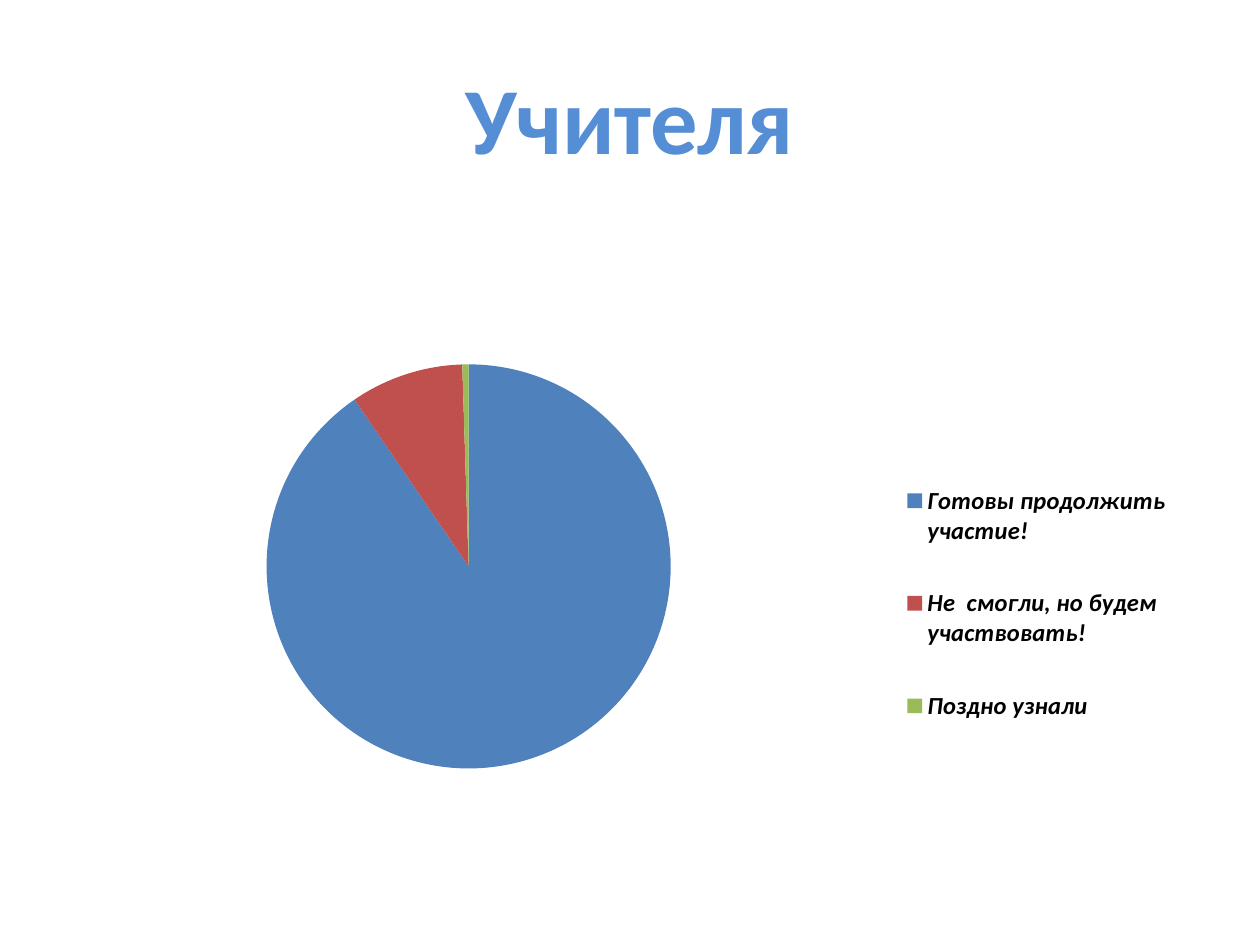
from lxml import etree
from pptx import Presentation
from pptx.chart.data import CategoryChartData
from pptx.dml.color import RGBColor
from pptx.enum.chart import XL_CHART_TYPE, XL_LEGEND_POSITION
from pptx.enum.text import MSO_ANCHOR, PP_ALIGN
from pptx.oxml.ns import qn
from pptx.util import Inches, Pt

PIE = XL_CHART_TYPE.PIE
LEGEND_RIGHT = XL_LEGEND_POSITION.RIGHT
MIDDLE = MSO_ANCHOR.MIDDLE
CENTER = PP_ALIGN.CENTER

FONT = "Calibri"
TITLE_BLUE = RGBColor(0x55, 0x8E, 0xD5)
BLACK = RGBColor(0, 0, 0)
BLUE = RGBColor(0x4F, 0x81, 0xBD)
RED = RGBColor(0xC0, 0x50, 0x4D)
GREEN = RGBColor(0x9B, 0xBB, 0x59)

ANSWERS = [
    ("Готовы продолжить участие!", 90, BLUE),
    ("Не  смогли, но будем участвовать!", 9, RED),
    ("Поздно узнали", 0.5, GREEN),
]


def format_font(font, size, color, bold=False, italic=False):
    font.name = FONT
    font.size = Pt(size)
    font.color.rgb = color
    font.bold = bold
    font.italic = italic


def add_text(slide, box, text, *, align=CENTER, anchor=MIDDLE, **font_format):
    shape = slide.shapes.add_textbox(*map(Inches, box))
    frame = shape.text_frame
    frame.word_wrap = True
    frame.vertical_anchor = anchor
    paragraph = frame.paragraphs[0]
    paragraph.alignment = align
    run = paragraph.add_run()
    run.text = text
    format_font(run.font, **font_format)


def set_layout(parent, box, before, inner=False):
    """Place a chart part at fractions of the chart, ahead of the named child."""
    for old_layout in parent.findall(qn("c:layout")):
        parent.remove(old_layout)
    layout = etree.Element(qn("c:layout"))
    manual = etree.SubElement(layout, qn("c:manualLayout"))
    settings = [("layoutTarget", "inner")] if inner else []
    settings += [("xMode", "edge"), ("yMode", "edge")]
    settings += zip("xywh", box)
    for name, value in settings:
        etree.SubElement(manual, qn(f"c:{name}")).set("val", str(value))
    parent.find(qn(before)).addprevious(layout)


def add_answer_pie(slide, box):
    data = CategoryChartData()
    data.categories = [label for label, _, _ in ANSWERS]
    data.add_series("Series 1", [value for _, value, _ in ANSWERS])
    chart = slide.shapes.add_chart(PIE, *map(Inches, box), data).chart
    chart.has_title = False
    format_font(chart.font, 10, BLACK)

    plot = chart.plots[0]
    plot.vary_by_categories = True
    for index, (_, _, color) in enumerate(ANSWERS):
        point_format = plot.series[0].points[index].format
        point_format.fill.solid()
        point_format.fill.fore_color.rgb = color
        point_format.line.fill.background()

    chart.has_legend = True
    legend = chart.legend
    legend.position = LEGEND_RIGHT
    legend.include_in_layout = False
    format_font(legend.font, 14, BLACK, bold=True, italic=True)

    plot_area = chart.element.find(".//" + qn("c:plotArea"))
    set_layout(plot_area, (0, 0.254, 0.735, 0.746), "c:pieChart", inner=True)
    legend_element = chart.element.find(".//" + qn("c:legend"))
    set_layout(legend_element, (0.73, 0.4, 0.27, 0.59), "c:overlay")


def main():
    presentation = Presentation()
    presentation.slide_width = Inches(10)
    presentation.slide_height = Inches(7.5)
    slide = presentation.slides.add_slide(presentation.slide_layouts[6])
    add_text(slide, (0.5, 0.3, 9, 1.25), "Учителя",
             size=54, color=TITLE_BLUE, bold=True)
    add_answer_pie(slide, (0.39, 1.8, 9.06, 4.3))
    presentation.save("out.pptx")


if __name__ == "__main__":
    main()
